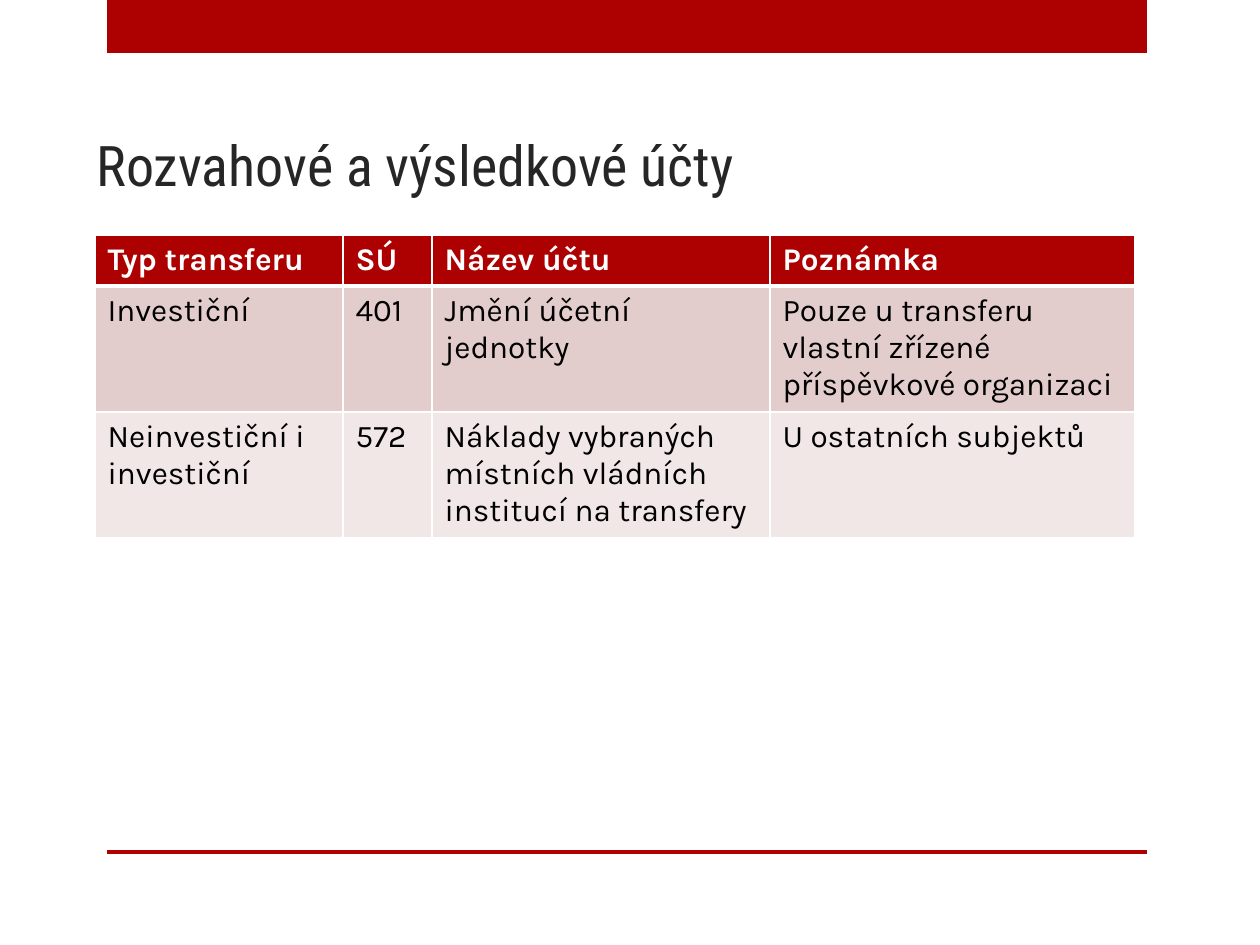
from dataclasses import dataclass

from lxml import etree
from pptx import Presentation
from pptx import util as u
from pptx.dml.color import RGBColor
from pptx.enum import shapes, text
from pptx.oxml.ns import qn

# Content
TITLE = "Rozvahové a výsledkové účty"
ROWS = [
    ("Typ transferu", "SÚ", "Název účtu", "Poznámka"),
    ("Investiční", "401", "Jmění účetní jednotky",
     "Pouze u transferu vlastní zřízené příspěvkové organizaci"),
    ("Neinvestiční i investiční", "572",
     "Náklady vybraných místních vládních institucí na transfery",
     "U ostatních subjektů"),
]

# Layout in px
PAGE_SIZE = (1260, 945)
BANDS = [(107, 0, 1040, 53), (107, 850, 1040, 4)]
TITLE_BOX = (84, 55, 1081, 149)
TABLE_AT = (95, 235)
COLUMN_WIDTHS = (248, 89, 338, 365)
ROW_HEIGHTS = (51, 123, 123)


@dataclass(frozen=True)
class Theme:
    accent: str = "AD0101"
    title_ink: str = "262626"
    ink: str = "000000"
    white: str = "FFFFFF"
    row_fills: tuple = ("AD0101", "E3CCCC", "F1E7E7")
    title_font: str = "Roboto Condensed"
    body_font: str = "Karla"
    title_size: int = 32
    body_size: int = 18


THEME = Theme()


def px(length):
    return u.Emu(round(length * 914400 / 126))


def paint(fill, color):
    fill.solid()
    fill.fore_color.rgb = RGBColor.from_string(color)


def write(para, words, font, size, color, bold=False):
    span = para.add_run()
    span.text = words
    span.font.name = font
    span.font.size = u.Pt(size)
    span.font.bold = bold
    span.font.color.rgb = RGBColor.from_string(color)


def set_borders(cell, widths):
    props = cell._tc.get_or_add_tcPr()
    for index, (side, width) in enumerate(widths.items()):
        line = etree.Element(qn(f"a:{side}"), w=str(u.Pt(width)))
        fill = etree.SubElement(line, qn("a:solidFill"))
        etree.SubElement(fill, qn("a:srgbClr"), val=THEME.white)
        props.insert(index, line)


def add_bands(page):
    for frame in BANDS:
        band = page.shapes.add_shape(shapes.MSO_SHAPE.RECTANGLE, *map(px, frame))
        band.shadow.inherit = False
        paint(band.fill, THEME.accent)
        band.line.fill.background()


def add_title(page):
    box = page.shapes.add_textbox(*map(px, TITLE_BOX))
    frame = box.text_frame
    frame.word_wrap = True
    frame.vertical_anchor = text.MSO_ANCHOR.BOTTOM
    write(frame.paragraphs[0], TITLE, THEME.title_font, THEME.title_size,
          THEME.title_ink)


def add_accounts_table(page):
    size = (sum(COLUMN_WIDTHS), sum(ROW_HEIGHTS))
    table = page.shapes.add_table(len(ROWS), len(COLUMN_WIDTHS),
                                  *map(px, TABLE_AT + size)).table
    for column, width in zip(table.columns, COLUMN_WIDTHS):
        column.width = px(width)
    for row, height in zip(table.rows, ROW_HEIGHTS):
        row.height = px(height)

    for r, row in enumerate(ROWS):
        header = r == 0
        # The rule under the header is thicker than the others
        borders = {"lnL": 1, "lnR": 1, "lnT": 3 if r == 1 else 1,
                   "lnB": 3 if header else 1}
        for c, words in enumerate(row):
            cell = table.cell(r, c)
            paint(cell.fill, THEME.row_fills[r])
            set_borders(cell, borders)
            write(cell.text_frame.paragraphs[0], words, THEME.body_font,
                  THEME.body_size, THEME.white if header else THEME.ink, header)


def main():
    deck = Presentation()
    deck.slide_width, deck.slide_height = map(px, PAGE_SIZE)
    page = deck.slides.add_slide(deck.slide_layouts[6])
    add_bands(page)
    add_title(page)
    add_accounts_table(page)
    deck.save("out.pptx")


if __name__ == "__main__":
    main()
